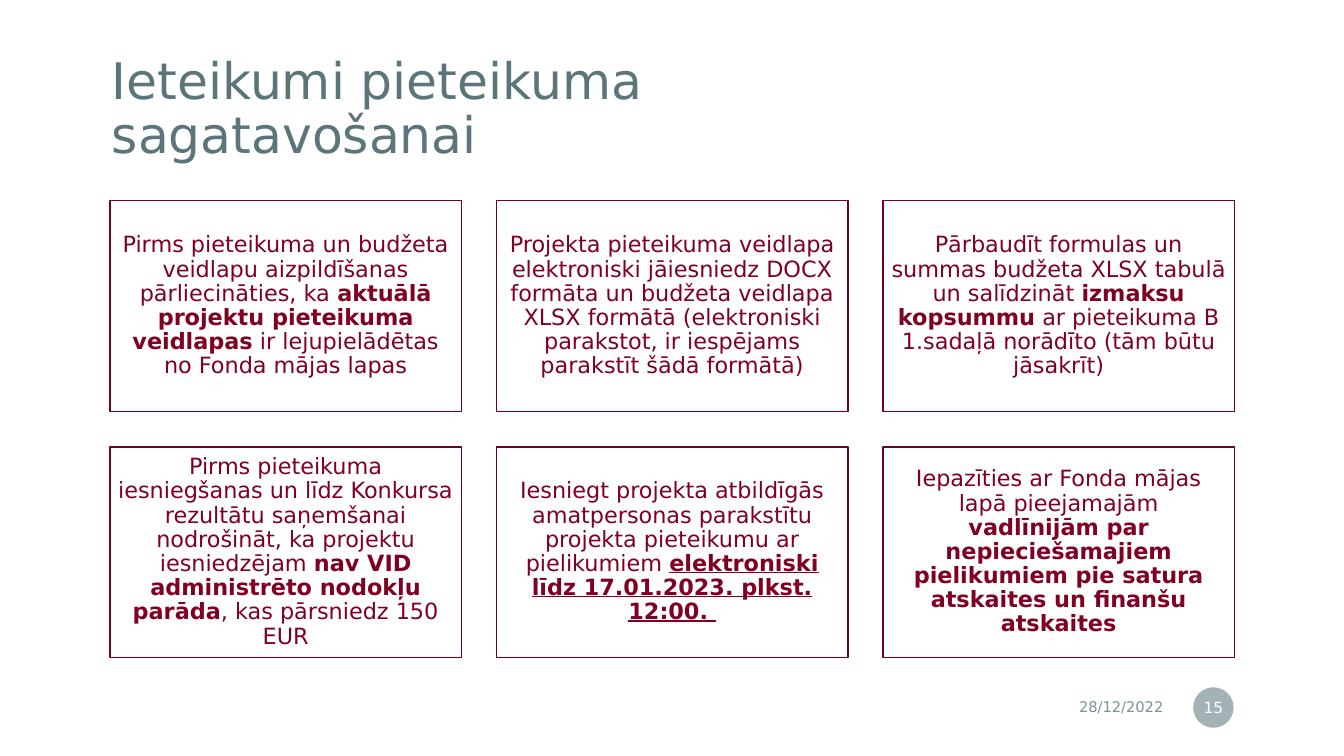
import pptx
import pptx.util
import pptx.dml.color
import pptx.enum.shapes
import pptx.enum.text
import pptx.oxml
import pptx.oxml.ns

Cm, Pt = pptx.util.Cm, pptx.util.Pt
RGBColor = pptx.dml.color.RGBColor
ALIGN = pptx.enum.text.PP_ALIGN
SHAPE = pptx.enum.shapes.MSO_SHAPE

WHITE = RGBColor(0xFF, 0xFF, 0xFF)
SLATE = RGBColor(0x5B, 0x75, 0x7A)
GREY = RGBColor(0x7C, 0x93, 0x96)
WINE = RGBColor(0x80, 0x00, 0x24)
DARK_WINE = RGBColor(0x74, 0x00, 0x21)

BOLD = {"bold": True}
UNDERLINED = {"bold": True, "underline": True}

TIPS = [
    [("Pirms pieteikuma un budžeta veidlapu aizpildīšanas pārliecināties, ka ", {}),
     ("aktuālā projektu pieteikuma veidlapas", BOLD),
     (" ir lejupielādētas no Fonda mājas lapas", {})],
    [("Projekta pieteikuma veidlapa elektroniski jāiesniedz DOCX formāta un budžeta "
      "veidlapa XLSX formātā (elektroniski parakstot, ir iespējams parakstīt šādā formātā)", {})],
    [("Pārbaudīt formulas un summas budžeta XLSX tabulā un salīdzināt ", {}),
     ("izmaksu kopsummu", BOLD),
     (" ar pieteikuma B 1.sadaļā norādīto (tām būtu jāsakrīt)", {})],
    [("Pirms pieteikuma iesniegšanas un līdz Konkursa rezultātu saņemšanai nodrošināt, "
      "ka projektu iesniedzējam ", {}),
     ("nav VID administrēto nodokļu parāda", BOLD),
     (", kas pārsniedz 150 EUR", {})],
    [("Iesniegt projekta atbildīgās amatpersonas parakstītu projekta pieteikumu ar "
      "pielikumiem ", {}),
     ("elektroniski līdz 17.01.2023. plkst. 12:00. ", UNDERLINED)],
    [("Iepazīties ar Fonda mājas lapā pieejamajām ", {}),
     ("vadlīnijām par nepieciešamajiem pielikumiem pie satura atskaites un finanšu "
      "atskaites", BOLD)],
]


class SlideBuilder:
    font = "DejaVu Sans"

    def __init__(self, prs):
        self.slide = prs.slides.add_slide(prs.slide_layouts[5])

    def put_text(self, sp, runs, size, color, align, margins, spacing=1.0):
        tf = sp.text_frame
        frame = dict(zip(("margin_left", "margin_top", "margin_right", "margin_bottom"),
                         map(Cm, margins)))
        frame.update(word_wrap=True, auto_size=pptx.enum.text.MSO_AUTO_SIZE.NONE,
                     vertical_anchor=pptx.enum.text.MSO_ANCHOR.MIDDLE)
        for name, value in frame.items():
            setattr(tf, name, value)
        p = tf.paragraphs[0]
        p.alignment, p.line_spacing = align, spacing
        for text, style in runs:
            r = p.add_run()
            r.text = text
            for name, value in {"name": self.font, "size": Pt(size), **style}.items():
                setattr(r.font, name, value)
            r.font.color.rgb = color

    def title(self, text, left, top, width, height):
        sp = self.slide.shapes.title
        box = {"left": left, "top": top, "width": width, "height": height}
        for name, value in box.items():
            setattr(sp, name, Cm(value))
        self.put_text(sp, [(text, {})], 36, SLATE, ALIGN.LEFT, [0.51] * 4, 0.9)

    def shape(self, kind, fill, *box):
        sp = self.slide.shapes.add_shape(kind, *map(Cm, box))
        sp.shadow.inherit = False
        sp.fill.solid()
        sp.fill.fore_color.rgb = fill
        return sp

    def card(self, runs, *box):
        sp = self.shape(SHAPE.RECTANGLE, WHITE, *box)
        sp.line.color.rgb = DARK_WINE
        sp.line.width = Pt(1)
        self.put_text(sp, runs, 16, WINE, ALIGN.CENTER, [0.18] * 4, 0.9)

    def date(self, text, *box):
        sp = self.slide.shapes.add_textbox(*map(Cm, box))
        self.put_text(sp, [(text, {})], 10.5, GREY, ALIGN.RIGHT, [0.25, 0.13, 0.25, 0.13])

    def page_badge(self, text, *box):
        sp = self.shape(SHAPE.OVAL, GREY, *box)
        sp.line.fill.background()
        color = sp._element.spPr.find(".//" + pptx.oxml.ns.qn("a:srgbClr"))
        color.append(pptx.oxml.parse_xml(
            f'<a:alpha {pptx.oxml.ns.nsdecls("a")} val="70000"/>'))
        self.put_text(sp, [(text, {})], 11, WHITE, ALIGN.CENTER, [0.05, 0.13, 0.05, 0.13])


def main():
    prs = pptx.Presentation()
    prs.slide_width, prs.slide_height = Cm(33.87), Cm(19.05)
    s = SlideBuilder(prs)
    s.title("Ieteikumi pieteikuma sagatavošanai", 2.31, 1.22, 22.17, 3.12)
    s.date("28/12/2022", 21.92, 17.37, 7.65, 0.89)
    s.page_badge("15", 30.07, 17.32, 1.02, 1.02)
    for i, runs in enumerate(TIPS):
        row, col = divmod(i, 3)
        s.card(runs, 2.77 + 9.74 * col, 5.06 + 6.2 * row, 8.86, 5.31)
    prs.save("out.pptx")


if __name__ == "__main__":
    main()
